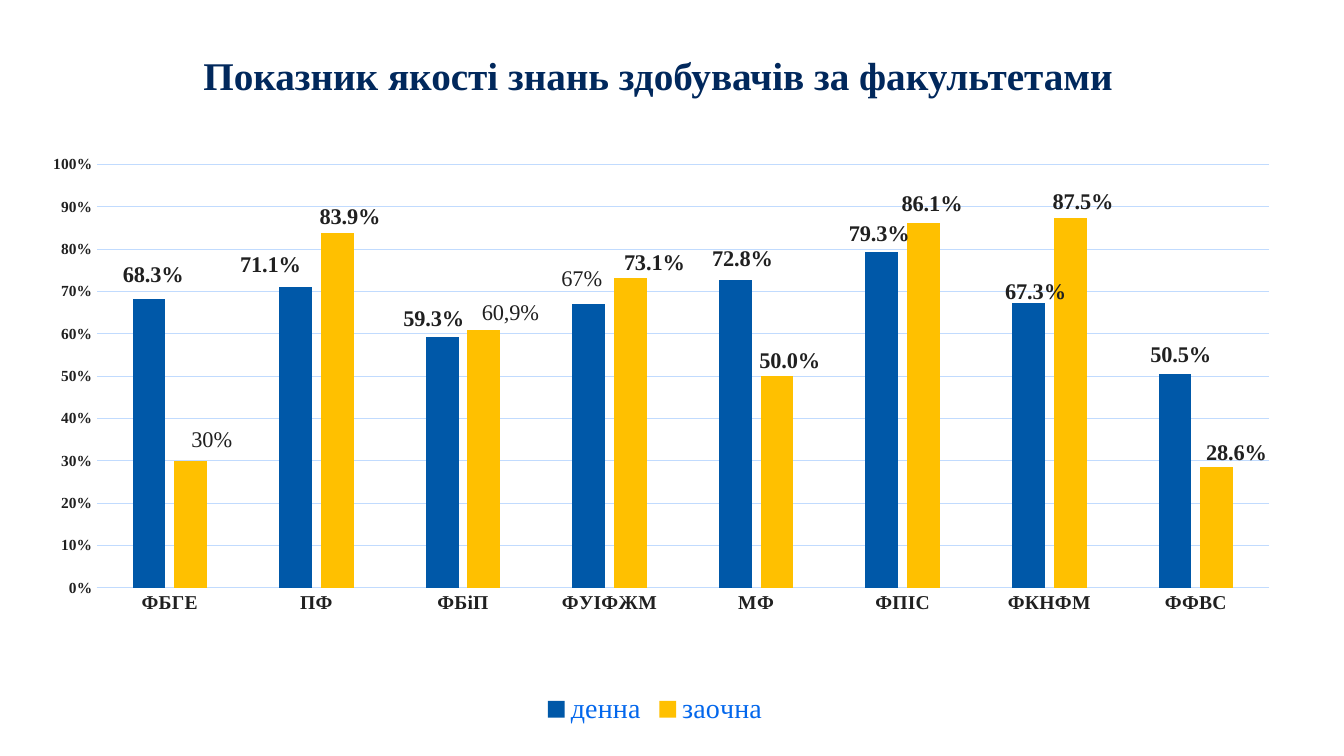
"""Build the slide comparing knowledge quality rates across faculties."""
from dataclasses import dataclass

from pptx import Presentation
from pptx.chart.chart import Chart
from pptx.chart.data import CategoryChartData
from pptx.chart.series import BarSeries
from pptx.dml.color import RGBColor
from pptx.enum.chart import XL_CHART_TYPE as ChartType
from pptx.enum.chart import XL_LABEL_POSITION as LabelPosition
from pptx.enum.chart import XL_LEGEND_POSITION as LegendPosition
from pptx.enum.chart import XL_TICK_MARK as TickMark
from pptx.enum.text import MSO_ANCHOR, PP_ALIGN
from pptx.oxml import parse_xml
from pptx.oxml.ns import nsdecls
from pptx.slide import Slide
from pptx.text.text import Font
from pptx.util import Pt

NAVY = RGBColor(0x01, 0x28, 0x5C)
INK = RGBColor(0x20, 0x20, 0x20)
PALE_BLUE = RGBColor(0xC1, 0xDB, 0xFE)
BRIGHT_BLUE = RGBColor(0x03, 0x67, 0xEC)
BLUE = RGBColor(0x00, 0x58, 0xA8)
GOLD = RGBColor(0xFF, 0xC0, 0x00)
SERIF = "Times New Roman"
CHART_WIDTH, CHART_HEIGHT = 882.7, 427
FACULTIES = ("ФБГЕ", "ПФ", "ФБіП", "ФУІФЖМ", "МФ", "ФПІС", "ФКНФМ", "ФФВС")


@dataclass(frozen=True)
class Rate:
    """One faculty's rate, with its label's shift in points and any typed label."""
    value: float
    shift_x: float
    shift_y: float
    typed: str = ""


@dataclass(frozen=True)
class StudyForm:
    """A form of study with its bar colour and rates in faculty order."""
    name: str
    color: RGBColor
    rates: tuple[Rate, ...]


STUDY_FORMS = (
    StudyForm("денна", BLUE, (
        Rate(0.683, 3, -5), Rate(0.711, -18, -4), Rate(0.593, -6, -1),
        Rate(0.67, -5, -6, "67%"), Rate(0.728, 5, -3), Rate(0.793, -2, -1),
        Rate(0.673, 5, 4), Rate(0.505, 4, -2))),
    StudyForm("заочна", GOLD, (
        Rate(0.3, 15, -3, "30%"), Rate(0.839, 9, 1), Rate(0.609, 19, 0, "60,9%"),
        Rate(0.731, 17, 1), Rate(0.5, 9, 1), Rate(0.861, 6, -2),
        Rate(0.875, 9, 1), Rate(0.286, 14, 2))),
)


def style_font(font: Font, size: float, color: RGBColor, bold: bool = False,
               face: str = SERIF) -> None:
    """Set the face, size, weight and colour of a font."""
    font.name = face
    font.size = Pt(size)
    font.bold = bold
    font.color.rgb = color


def add_heading(slide: Slide) -> None:
    """Add the slide heading."""
    heading = slide.shapes.add_textbox(Pt(138.2), Pt(26.6), Pt(679.7), Pt(57.6))
    frame = heading.text_frame
    frame.word_wrap = True
    frame.vertical_anchor = MSO_ANCHOR.MIDDLE
    frame.text = "Показник якості знань здобувачів за факультетами"
    line = frame.paragraphs[0]
    line.alignment = PP_ALIGN.LEFT
    line.line_spacing = 0.9
    style_font(line.runs[0].font, 28, NAVY, bold=True)


def place_plot(chart: Chart) -> None:
    """Fix the inner plot area inside the chart frame."""
    plot_area = chart.element.xpath("c:chart/c:plotArea")[0]
    for automatic in plot_area.xpath("c:layout"):
        plot_area.remove(automatic)
    bounds = (("x", 0.048), ("y", 0.053), ("w", 0.949), ("h", 0.708))
    modes = '<c:xMode val="edge"/><c:yMode val="edge"/>'
    sides = "".join(f'<c:{side} val="{share}"/>' for side, share in bounds)
    plot_area.insert(0, parse_xml(
        f'<c:layout {nsdecls("c")}><c:manualLayout><c:layoutTarget val="inner"/>'
        f"{modes}{sides}</c:manualLayout></c:layout>"))


def style_axes(chart: Chart) -> None:
    """Format the faculty and percentage axes."""
    faculty_axis, percent_axis = chart.category_axis, chart.value_axis
    for axis, size in ((faculty_axis, 14), (percent_axis, 11)):
        axis.major_tick_mark = axis.minor_tick_mark = TickMark.NONE
        style_font(axis.tick_labels.font, size, INK, bold=True)
    percent_axis.minimum_scale, percent_axis.maximum_scale = 0, 1
    percent_axis.major_unit = 0.1
    percent_axis.tick_labels.number_format = "0%"
    percent_axis.tick_labels.number_format_is_linked = False
    percent_axis.format.line.fill.background()
    for rule in (faculty_axis.format.line, percent_axis.major_gridlines.format.line):
        rule.color.rgb = PALE_BLUE
        rule.width = Pt(0.75)


def label_bars(bars: BarSeries, rates: tuple[Rate, ...]) -> None:
    """Label every bar and shift each label from its usual place."""
    labels = bars.data_labels
    labels.show_value = True
    labels.position = LabelPosition.OUTSIDE_END
    labels.number_format = "0.0%"
    labels.number_format_is_linked = False
    style_font(labels.font, 16, INK, bold=True)
    for index, rate in enumerate(rates):
        label = bars.points[index].data_label
        label.position = LabelPosition.OUTSIDE_END
        if rate.typed:
            label.text_frame.text = rate.typed
            style_font(label.text_frame.paragraphs[0].runs[0].font, 16, INK)
        else:
            style_font(label.font, 16, INK, bold=True)
    for node, rate in zip(bars._element.xpath("c:dLbls/c:dLbl"), rates):
        node.insert(1, parse_xml(
            f'<c:layout {nsdecls("c")}><c:manualLayout>'
            f'<c:x val="{rate.shift_x / CHART_WIDTH:.4f}"/>'
            f'<c:y val="{rate.shift_y / CHART_HEIGHT:.4f}"/>'
            f"</c:manualLayout></c:layout>"))
        if not rate.typed:
            node.insert(2, parse_xml(
                f'<c:numFmt {nsdecls("c")} formatCode="0.0%" sourceLinked="0"/>'))


def add_rates_chart(slide: Slide) -> None:
    """Add the clustered columns of rates by faculty and form of study."""
    rates_data = CategoryChartData(number_format="0.0%")
    rates_data.categories = FACULTIES
    for form in STUDY_FORMS:
        rates_data.add_series(form.name, [rate.value for rate in form.rates])
    chart = slide.shapes.add_chart(
        ChartType.COLUMN_CLUSTERED, Pt(26.6), Pt(95), Pt(CHART_WIDTH),
        Pt(CHART_HEIGHT), rates_data).chart
    style_font(chart.font, 10, NAVY, face="Arial")
    chart.has_title = False
    chart.has_legend = True
    chart.legend.position = LegendPosition.BOTTOM
    chart.legend.include_in_layout = False
    style_font(chart.legend.font, 20, BRIGHT_BLUE)
    place_plot(chart)
    style_axes(chart)
    columns = chart.plots[0]
    columns.gap_width, columns.overlap = 219, -27
    columns.vary_by_categories = False
    for bars, form in zip(columns.series, STUDY_FORMS):
        bars.format.fill.solid()
        bars.format.fill.fore_color.rgb = form.color
        bars.invert_if_negative = False
        label_bars(bars, form.rates)


def main() -> None:
    """Build and save the presentation."""
    deck = Presentation()
    deck.slide_width, deck.slide_height = Pt(960), Pt(540)
    slide = deck.slides.add_slide(deck.slide_layouts[6])
    add_heading(slide)
    add_rates_chart(slide)
    deck.save("out.pptx")


if __name__ == "__main__":
    main()
